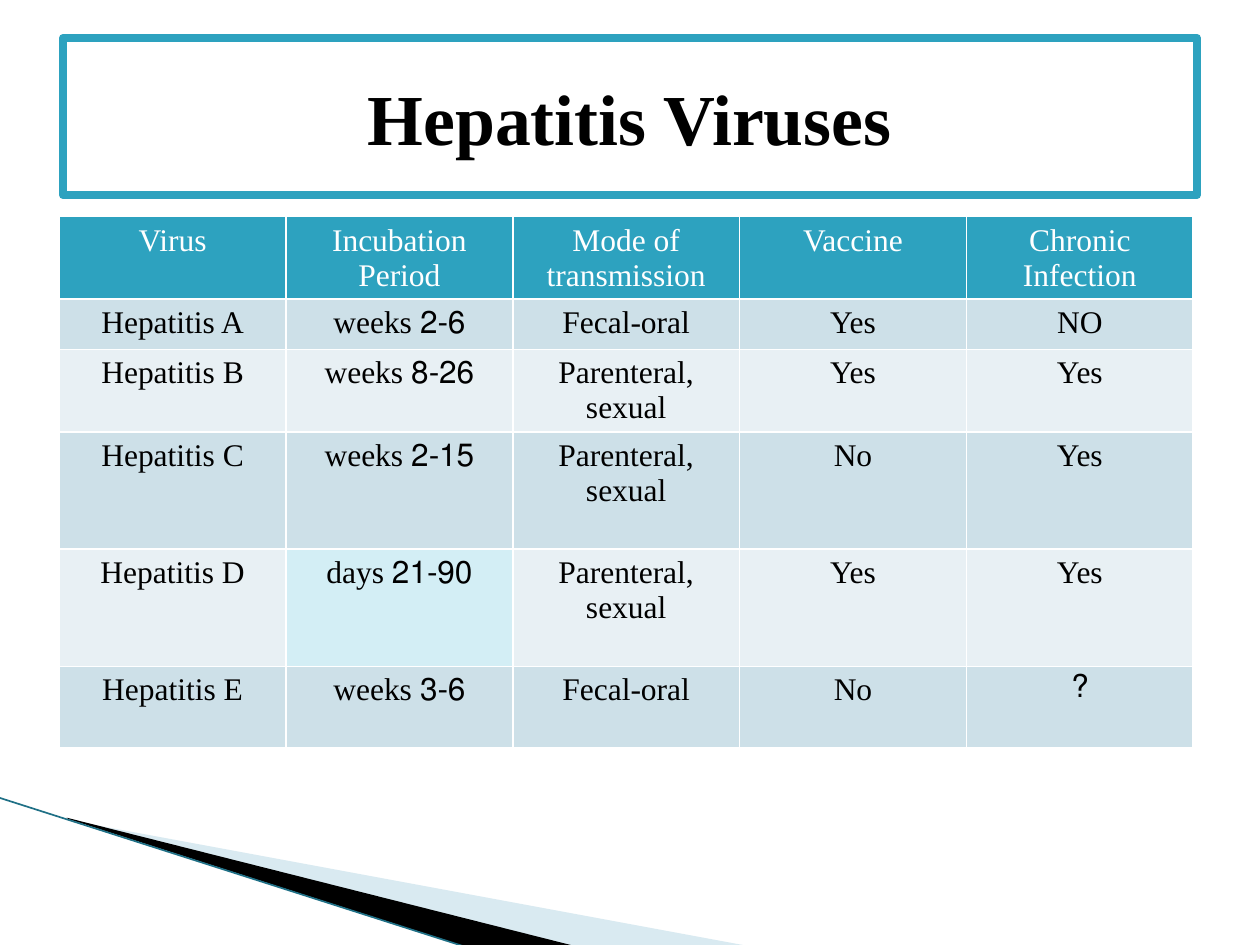
from lxml.etree import SubElement
from pptx import Presentation
from pptx.dml.color import RGBColor
from pptx.enum.shapes import MSO_CONNECTOR as CONN, MSO_SHAPE as SHAPE
from pptx.enum.text import MSO_ANCHOR as ANCHOR, PP_ALIGN as ALIGN
from pptx.oxml.ns import qn
from pptx.util import Inches, Pt

WHITE = RGBColor(0xFF, 0xFF, 0xFF)
BLACK = RGBColor(0, 0, 0)
TEAL = RGBColor(0x2D, 0xA2, 0xBF)
DARK_TEAL = RGBColor(0x1F, 0x70, 0x86)
PALE_BLUE = RGBColor(0xA0, 0xCB, 0xDC)
BAND_DARK = RGBColor(0xCD, 0xE0, 0xE8)
BAND_LIGHT = RGBColor(0xE8, 0xF0, 0xF4)
HIGHLIGHT = RGBColor(0xD3, 0xEE, 0xF5)
FONT = "Times New Roman"

COL_W = 1.8
ROW_H = [0.65, 0.4, 0.65, 0.93, 0.93, 0.65]
ROWS = [
    ["Virus", "Incubation Period", "Mode of transmission", "Vaccine",
     "Chronic Infection"],
    ["Hepatitis A", "2-6 weeks", "Fecal-oral", "Yes", "NO"],
    ["Hepatitis B", "8-26 weeks", "Parenteral, sexual", "Yes", "Yes"],
    ["Hepatitis C", "2-15 weeks", "Parenteral, sexual", "No", "Yes"],
    ["Hepatitis D", "21-90 days", "Parenteral, sexual", "Yes", "Yes"],
    ["Hepatitis E", "3-6 weeks", "Fecal-oral", "No", "?"],
]
PERIOD_COL = 1


def write(tf, text, size=18, color=BLACK, bold=False, rtl=False):
    p = tf.paragraphs[0]
    p.alignment = ALIGN.CENTER
    if rtl:
        p._p.get_or_add_pPr().set("rtl", "1")
    r = p.add_run()
    r.text = text
    r.font.name, r.font.size, r.font.bold = FONT, Pt(size), bold
    r.font.color.rgb = color


def set_frame(sp, frame):
    # Give the outline its own frame; the points keep their place on the slide
    left, top, width, height = map(Inches, frame)
    dx, dy = sp.left - left, sp.top - top
    outline = sp._element.spPr.find(".//" + qn("a:path"))
    outline.set("w", str(width))
    outline.set("h", str(height))
    for pt in outline.iter(qn("a:pt")):
        pt.set("x", str(int(pt.get("x")) + dx))
        pt.set("y", str(int(pt.get("y")) + dy))
    sp.left, sp.top, sp.width, sp.height = left, top, width, height


def add_wedge(s, points, frame, color, opacity=100):
    start, *rest = [(Inches(x), Inches(y)) for x, y in points]
    builder = s.shapes.build_freeform(*start)
    builder.add_line_segments(rest, close=True)
    sp = builder.convert_to_shape()
    set_frame(sp, frame)
    sp.shadow.inherit = False
    sp.fill.solid()
    sp.fill.fore_color.rgb = color
    sp.line.fill.background()
    if opacity < 100:
        srgb = sp._element.spPr.find(".//" + qn("a:srgbClr"))
        SubElement(srgb, qn("a:alpha"), val=str(opacity * 1000))


def add_edge(s, start, end, color, width):
    line = s.shapes.add_connector(CONN.STRAIGHT, *map(Inches, start + end))
    line.line.color.rgb = color
    line.line.width = Pt(width)
    SubElement(line._element.spPr, qn("a:effectLst"))


def add_title(s, text):
    sp = s.shapes.add_shape(SHAPE.RECTANGLE, Inches(0.5), Inches(0.3),
                            Inches(9), Inches(1.25))
    sp.shadow.inherit = False
    sp.fill.solid()
    sp.fill.fore_color.rgb = WHITE
    sp.line.color.rgb = TEAL
    sp.line.width = Pt(4.33)
    SubElement(sp.line._get_or_add_ln(), qn("a:round"))
    sp.text_frame.word_wrap = True
    sp.text_frame.vertical_anchor = ANCHOR.MIDDLE
    write(sp.text_frame, text, size=41, bold=True, rtl=True)


def set_borders(cell):
    # Borders must come before the fill in the cell properties
    tcPr = cell._tc.get_or_add_tcPr()
    for side in "LRTB":
        ln = SubElement(tcPr, qn(f"a:ln{side}"), w=str(Pt(1)))
        fill = SubElement(ln, qn("a:solidFill"))
        SubElement(fill, qn("a:srgbClr"), val=str(WHITE))


def cell_fill(row, text):
    if row == 0:
        return TEAL
    if text == "21-90 days":
        return HIGHLIGHT
    return BAND_DARK if row % 2 else BAND_LIGHT


def add_virus_table(s):
    n_cols = len(ROWS[0])
    table = s.shapes.add_table(
        len(ROWS), n_cols, Inches(0.47), Inches(1.72),
        Inches(COL_W * n_cols), Inches(sum(ROW_H))).table
    for col in table.columns:
        col.width = Inches(COL_W)
    for i, (texts, height) in enumerate(zip(ROWS, ROW_H)):
        table.rows[i].height = Inches(height)
        for j, text in enumerate(texts):
            cell = table.cell(i, j)
            set_borders(cell)
            cell.fill.solid()
            cell.fill.fore_color.rgb = cell_fill(i, text)
            # Periods and the question mark run right to left
            rtl = i > 0 and (j == PERIOD_COL or text == "?")
            write(cell.text_frame, text, color=BLACK if i else WHITE, rtl=rtl)


def main():
    prs = Presentation()
    prs.slide_width, prs.slide_height = Inches(10), Inches(7.5)
    s = prs.slides.add_slide(prs.slide_layouts[6])

    # Corner decoration
    add_wedge(s, [(0.55, 6.51), (5.95, 7.51), (4.56, 7.51), (0.55, 6.5)],
              (0.78, 5.47, 4.16, 1.58), PALE_BLUE, opacity=40)
    add_wedge(s, [(0.53, 6.49), (4.57, 7.51), (3.72, 7.52), (0.54, 6.5)],
              (-0.06, 6.33, 4.16, 0.92), BLACK)
    add_edge(s, (-0.01, 6.33), (3.71, 7.52), DARK_TEAL, 0.95)

    # Content
    add_title(s, "Hepatitis Viruses")
    add_virus_table(s)
    prs.save("out.pptx")


if __name__ == "__main__":
    main()
